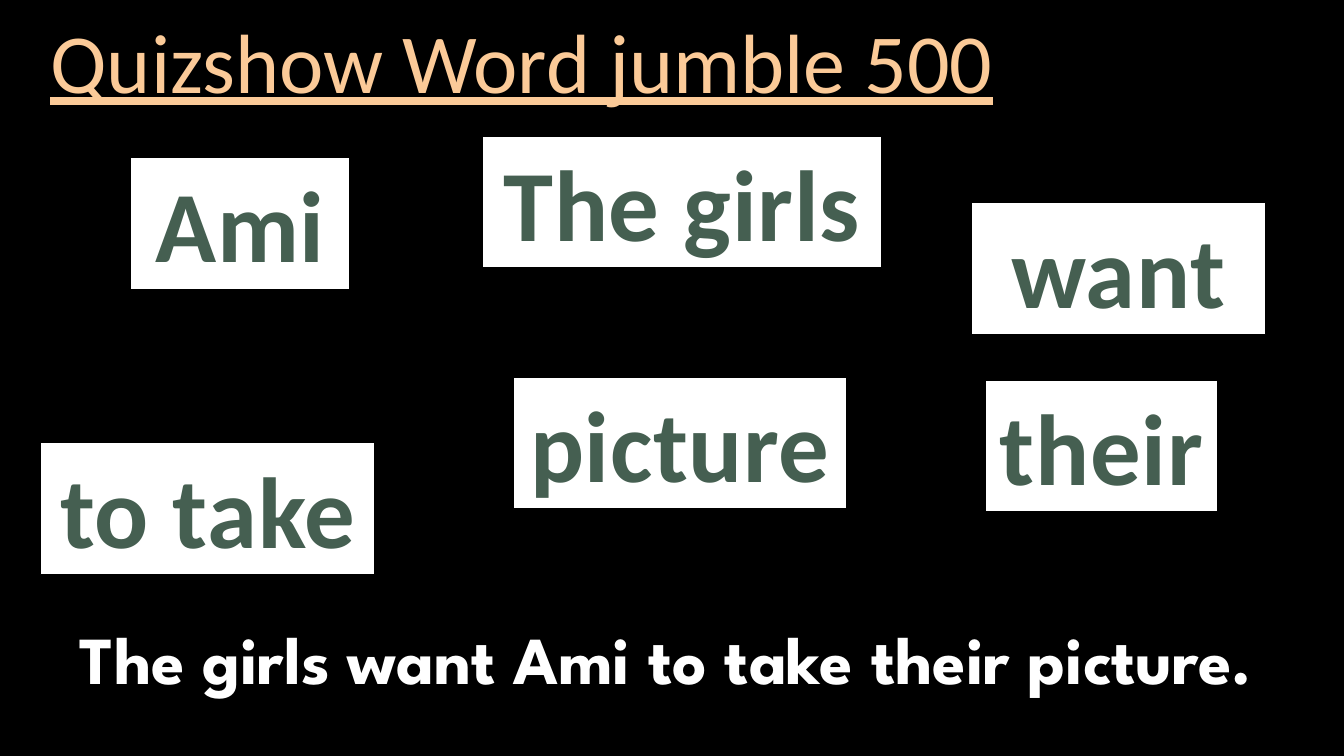
from pptx import Presentation
from pptx.dml.color import RGBColor
from pptx.enum.shapes import MSO_SHAPE
from pptx.enum.text import MSO_ANCHOR, MSO_AUTO_SIZE, PP_ALIGN
from pptx.util import Inches, Pt

RECTANGLE = MSO_SHAPE.RECTANGLE
MIDDLE, TOP = MSO_ANCHOR.MIDDLE, MSO_ANCHOR.TOP
NO_FIT, GROW = MSO_AUTO_SIZE.NONE, MSO_AUTO_SIZE.SHAPE_TO_FIT_TEXT
LEFT, CENTER = PP_ALIGN.LEFT, PP_ALIGN.CENTER

BLACK = RGBColor(0x00, 0x00, 0x00)
WHITE = RGBColor(0xFF, 0xFF, 0xFF)
PEACH = RGBColor(0xFB, 0xCA, 0x98)
GREEN = RGBColor(0x45, 0x5F, 0x51)

CARD_HEIGHT = 1.31
WORD_CARDS = [
    ("to take", 0.4, 4.39, 3.32),
    ("The girls", 4.78, 1.35, 3.97),
    ("want", 9.63, 2.01, 2.92),
    ("Ami", 1.29, 1.56, 2.18),
    ("their", 9.77, 3.77, 2.31),
    ("picture", 5.09, 3.74, 3.31),
]


def write_text(shape, text, font_name, size, color, alignment):
    """Put one formatted line of text in a shape and return its run."""
    shape.text_frame.text = text
    paragraph = shape.text_frame.paragraphs[0]
    paragraph.alignment = alignment
    run = paragraph.runs[0]
    run.font.name = font_name
    run.font.size = Pt(size)
    run.font.color.rgb = color
    return run


def add_title(slide, text):
    """Place the underlined title in the title placeholder."""
    title = slide.shapes.title
    title.left, title.top = Inches(0.4), Inches(0.16)
    title.width, title.height = Inches(11.39), Inches(0.99)
    run = write_text(title, text, "Calibri", 60, PEACH, LEFT)
    run.font.underline = True
    title.text_frame.vertical_anchor = MIDDLE
    title.text_frame.auto_size = NO_FIT
    title.text_frame.paragraphs[0].line_spacing = 0.9


def add_word_card(slide, word, left, top, width):
    """Add a white card that holds one piece of the sentence."""
    card = slide.shapes.add_shape(
        RECTANGLE, Inches(left), Inches(top), Inches(width), Inches(CARD_HEIGHT))
    card.shadow.inherit = False
    card.fill.solid()
    card.fill.fore_color.rgb = WHITE
    card.line.color.rgb = BLACK
    card.line.width = Pt(1)
    run = write_text(card, word, "Calibri", 72, GREEN, CENTER)
    run.font.bold = True
    run._r.get_or_add_rPr().set("spc", "50")
    card.text_frame.vertical_anchor = TOP
    card.text_frame.word_wrap = False
    card.text_frame.auto_size = GROW


def add_answer(slide, text):
    """Add the solved sentence along the bottom."""
    answer = slide.shapes.add_textbox(
        Inches(0.07), Inches(6.07), Inches(13.08), Inches(0.91))
    run = write_text(answer, text, "League Spartan", 48, WHITE, CENTER)
    run.font.bold = True
    answer.text_frame.word_wrap = False
    answer.text_frame.auto_size = GROW


def main():
    """Build the word jumble slide and save it."""
    presentation = Presentation()
    presentation.slide_width = Inches(13.33)
    presentation.slide_height = Inches(7.5)
    slide = presentation.slides.add_slide(presentation.slide_layouts[5])
    slide.background.fill.solid()
    slide.background.fill.fore_color.rgb = BLACK
    add_title(slide, "Quizshow Word jumble 500")
    for word, left, top, width in WORD_CARDS:
        add_word_card(slide, word, left, top, width)
    add_answer(slide, "The girls want Ami to take their picture.")
    presentation.save("out.pptx")


if __name__ == "__main__":
    main()
